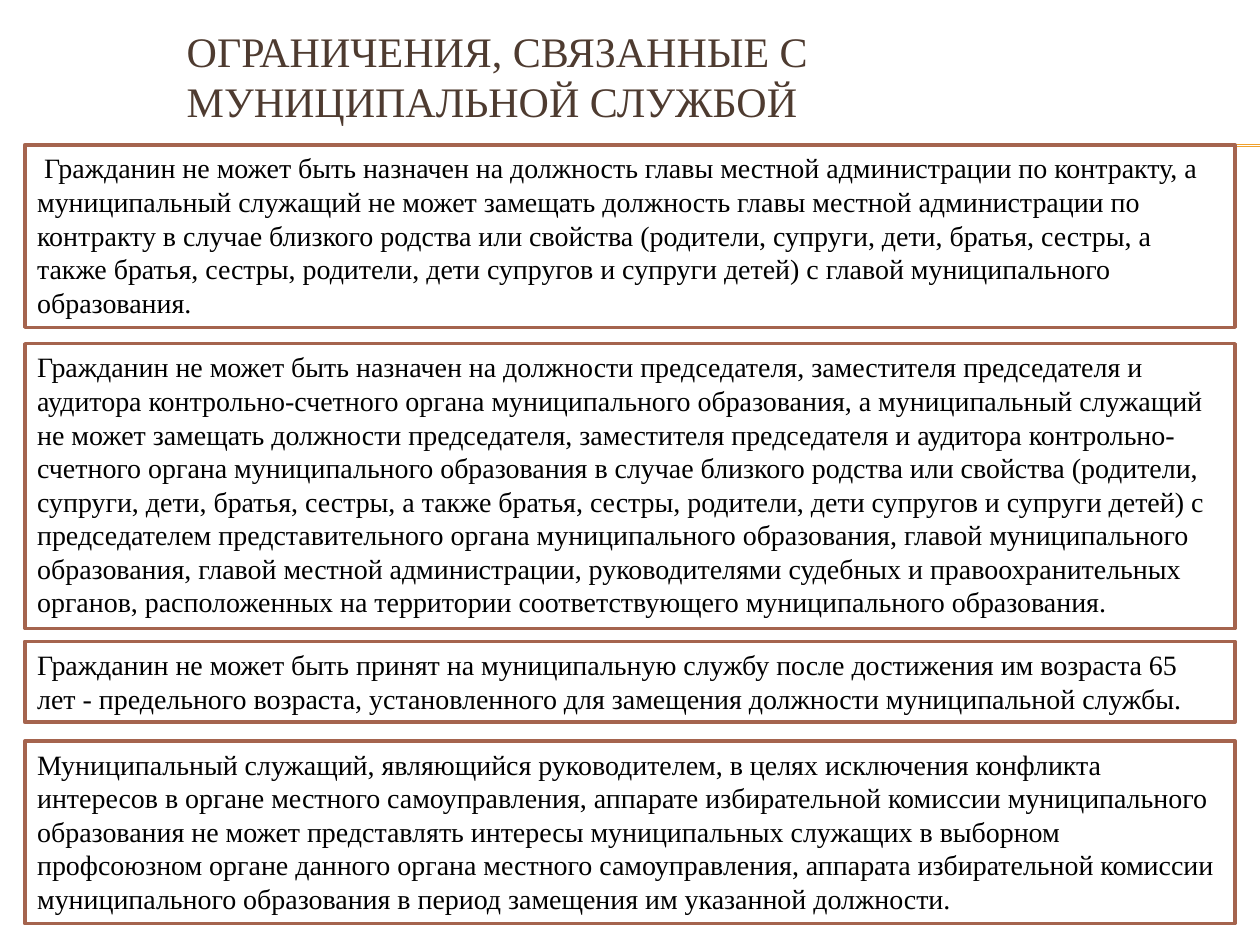
from dataclasses import dataclass

from lxml.etree import SubElement
from pptx import Presentation
from pptx.dml.color import RGBColor
from pptx.enum.shapes import MSO_CONNECTOR, MSO_SHAPE
from pptx.enum.text import MSO_ANCHOR, MSO_AUTO_SIZE, PP_ALIGN
from pptx.oxml.ns import qn
from pptx.util import Cm, Pt


@dataclass(frozen=True)
class Theme:
    """Colours, font and type sizes of the slide."""
    font: str = "Times New Roman"
    title: RGBColor = RGBColor(0x4E, 0x3B, 0x30)
    text: RGBColor = RGBColor(0, 0, 0)
    paper: RGBColor = RGBColor(0xFF, 0xFF, 0xFF)
    border: RGBColor = RGBColor(0xA5, 0x64, 0x4E)
    rule: RGBColor = RGBColor(0xF0, 0xA2, 0x2E)
    title_size: Pt = Pt(24)
    text_size: Pt = Pt(16)


THEME = Theme()
TITLE = "ОГРАНИЧЕНИЯ, СВЯЗАННЫЕ С МУНИЦИПАЛЬНОЙ СЛУЖБОЙ"
RESTRICTIONS = [
    (2.92, 3.68,
     " Гражданин не может быть назначен на должность главы местной администрации "
     "по контракту, а муниципальный служащий не может замещать должность главы "
     "местной администрации по контракту в случае близкого родства или свойства "
     "(родители, супруги, дети, братья, сестры, а также братья, сестры, родители, "
     "дети супругов и супруги детей) с главой муниципального образования."),
    (6.93, 5.74,
     "Гражданин не может быть назначен на должности председателя, заместителя "
     "председателя и аудитора контрольно-счетного органа муниципального "
     "образования, а муниципальный служащий не может замещать должности "
     "председателя, заместителя председателя и аудитора контрольно-счетного органа "
     "муниципального образования в случае близкого родства или свойства (родители, "
     "супруги, дети, братья, сестры, а также братья, сестры, родители, дети "
     "супругов и супруги детей) с председателем представительного органа "
     "муниципального образования, главой муниципального образования, главой местной "
     "администрации, руководителями судебных и правоохранительных органов, "
     "расположенных на территории соответствующего муниципального образования."),
    (12.93, 1.63,
     "Гражданин не может быть принят на муниципальную службу после достижения им "
     "возраста 65 лет - предельного возраста, установленного для замещения "
     "должности муниципальной службы."),
    (14.94, 3.68,
     "Муниципальный служащий, являющийся руководителем, в целях исключения "
     "конфликта интересов в органе местного самоуправления, аппарате избирательной "
     "комиссии муниципального образования не может представлять интересы "
     "муниципальных служащих в выборном профсоюзном органе данного органа местного "
     "самоуправления, аппарата избирательной комиссии муниципального образования в "
     "период замещения им указанной должности."),
]


def set_attrs(obj, values):
    """Set every attribute in a dict of format values."""
    for name, value in values.items():
        setattr(obj, name, value)


def write_text(tf, text, size, color):
    """Fill a text frame with one left-aligned paragraph."""
    set_attrs(tf, {"word_wrap": True, "vertical_anchor": MSO_ANCHOR.MIDDLE})
    p = tf.paragraphs[0]
    p.alignment = PP_ALIGN.LEFT
    r = p.add_run()
    r.text = text
    set_attrs(r.font, {"name": THEME.font, "size": size})
    r.font.color.rgb = color


def add_rule(s, y):
    """Draw a thin horizontal rule that runs to the right edge."""
    line = s.shapes.add_connector(MSO_CONNECTOR.STRAIGHT, Cm(1.42), y, Cm(25.4), y)
    line.line.color.rgb = THEME.rule
    line.line.width = Pt(0.75)
    SubElement(line._element.spPr, qn("a:effectLst"))


def add_title(s, text):
    """Place and format the title placeholder."""
    sp = s.shapes.title
    set_attrs(sp, {"left": Cm(3.51), "top": Cm(0.33),
                   "width": Cm(18.59), "height": Cm(2.39)})
    sp.text_frame.auto_size = MSO_AUTO_SIZE.NONE
    write_text(sp.text_frame, text, THEME.title_size, THEME.title)


def add_box(s, top, height, text):
    """Add a bordered full-width box with one restriction."""
    sp = s.shapes.add_shape(MSO_SHAPE.RECTANGLE, Cm(0.5), Cm(top), Cm(24.4), Cm(height))
    sp.shadow.inherit = False
    sp.fill.solid()
    sp.fill.fore_color.rgb = THEME.paper
    sp.line.color.rgb = THEME.border
    sp.line.width = Pt(2)
    sp.text_frame.auto_size = MSO_AUTO_SIZE.SHAPE_TO_FIT_TEXT
    write_text(sp.text_frame, text, THEME.text_size, THEME.text)
    sp.text_frame.vertical_anchor = MSO_ANCHOR.TOP


def main():
    """Build and save the slide."""
    prs = Presentation()
    set_attrs(prs, {"slide_width": Cm(25.4), "slide_height": Cm(19.05)})
    s = prs.slides.add_slide(prs.slide_layouts[5])
    for y in (2.92, 2.95):
        add_rule(s, Cm(y))
    for top, height, text in RESTRICTIONS:
        add_box(s, top, height, text)
    add_title(s, TITLE)
    prs.save("out.pptx")


if __name__ == "__main__":
    main()
